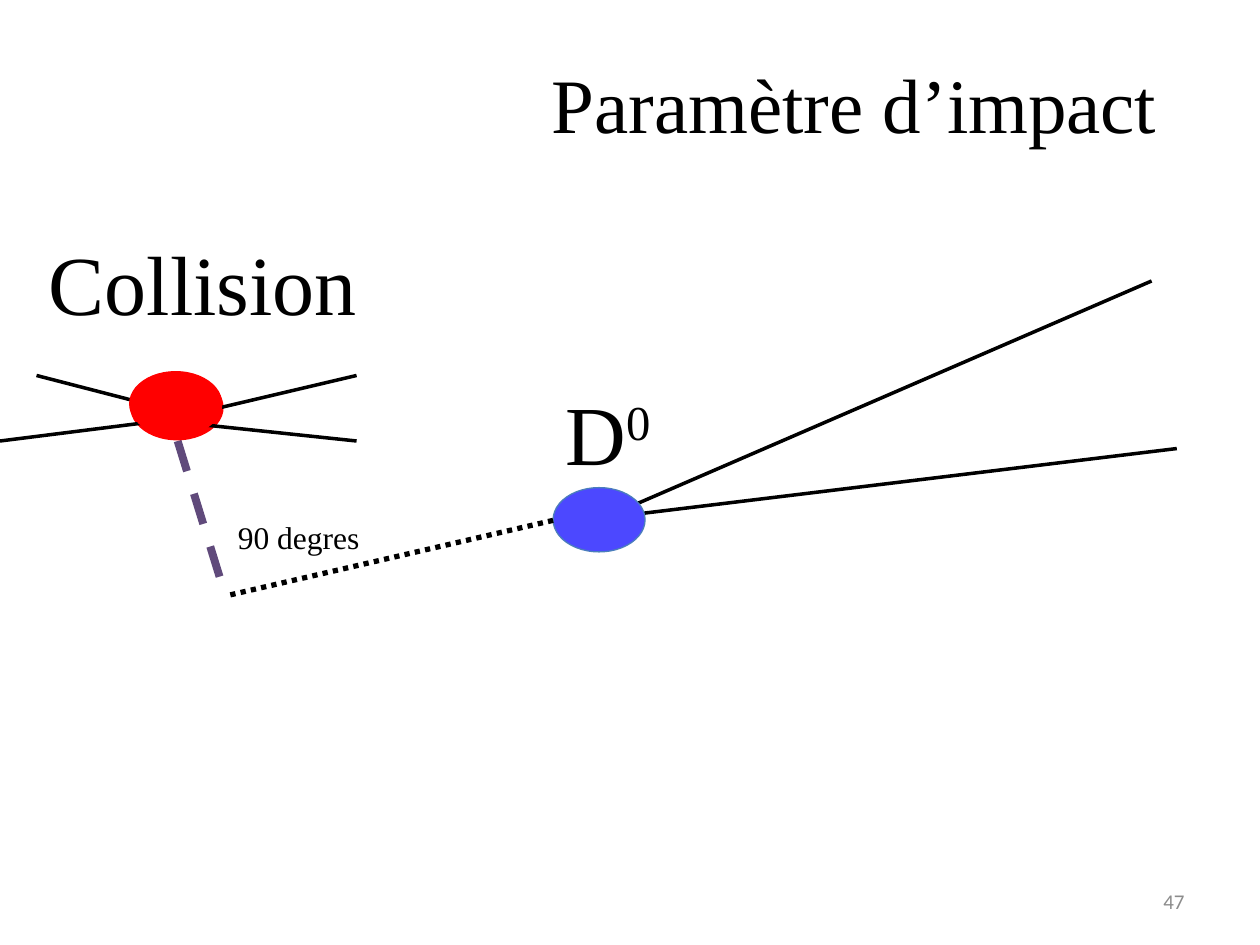
from typing import NamedTuple, Optional

from lxml.etree import SubElement
from pptx import Presentation
from pptx.dml.color import RGBColor
from pptx.enum.dml import MSO_LINE_DASH_STYLE as DASH
from pptx.enum.shapes import MSO_CONNECTOR, MSO_SHAPE
from pptx.enum.text import MSO_ANCHOR, MSO_AUTO_SIZE, PP_ALIGN
from pptx.oxml.ns import qn
from pptx.util import Inches, Pt

BLACK = RGBColor(0x00, 0x00, 0x00)
GREY = RGBColor(0x8C, 0x8C, 0x8C)
RED = RGBColor(0xFF, 0x00, 0x00)
BLUE = RGBColor(0x4C, 0x48, 0xFF)
BLUE_EDGE = RGBColor(0x4B, 0x7E, 0xBC)
PURPLE = RGBColor(0x60, 0x4A, 0x7B)
SERIF = "Times New Roman"


class Track(NamedTuple):
    x1: float
    y1: float
    x2: float
    y2: float
    color: RGBColor = BLACK
    width: float = 2
    dash: Optional[DASH] = None


class Vertex(NamedTuple):
    x: float
    y: float
    fill: RGBColor
    edge: RGBColor


class Label(NamedTuple):
    text: str
    x: float
    y: float
    w: float
    h: float
    size: float
    superscript: str = ""


DECAY_TRACKS = [
    Track(4.75, 4.13, 9.14, 2.23),
    Track(4.64, 4.13, 9.34, 3.56),
]
D0_VERTEX = Vertex(4.39, 3.87, BLUE, BLUE_EDGE)
IMPACT_LINES = [
    Track(4.39, 4.13, 1.79, 4.73, width=3, dash=DASH.ROUND_DOT),
    Track(1.41, 3.5, 1.79, 4.73, PURPLE, 4.5, DASH.DASH),
]
COLLISION_TRACKS = [
    Track(1.26, 3.35, 2.83, 2.98),
    Track(1.41, 3.35, 2.83, 3.5),
    Track(0, 3.5, 1.59, 3.3),
    Track(0.29, 2.98, 1.41, 3.27),
]
COLLISION_BACK = Vertex(1.04, 2.98, RED, RED)
COLLISION_FRONT = Vertex(1.03, 2.95, RED, RED)
LABELS = [
    Label("D", 4.39, 2.98, 0.91, 0.91, 48, superscript="0"),
    Label("90 degres", 1.79, 4.06, 1.2, 0.4, 18),
    Label("Collision", 0.29, 1.79, 2.67, 0.91, 48),
]
TITLE = Label("Paramètre d’impact", 4.28, 0.4, 5.05, 0.84, 44)


def add_tracks(slide, tracks: list[Track]) -> None:
    for t in tracks:
        line = slide.shapes.add_connector(
            MSO_CONNECTOR.STRAIGHT,
            Inches(t.x1), Inches(t.y1), Inches(t.x2), Inches(t.y2))
        line.line.color.rgb = t.color
        line.line.width = Pt(t.width)
        if t.dash is not None:
            line.line.dash_style = t.dash
        SubElement(line._element.spPr, qn("a:effectLst"))


def add_vertex(slide, v: Vertex) -> None:
    sp = slide.shapes.add_shape(
        MSO_SHAPE.OVAL, Inches(v.x), Inches(v.y), Inches(0.73), Inches(0.51))
    sp.shadow.inherit = False
    sp.fill.solid()
    sp.fill.fore_color.rgb = v.fill
    sp.line.color.rgb = v.edge
    sp.line.width = Pt(0.75)


def fill_label(sp, label: Label) -> None:
    """Write unwrapped serif text into a text box or placeholder."""
    tf = sp.text_frame
    tf.word_wrap = False
    tf.auto_size = MSO_AUTO_SIZE.SHAPE_TO_FIT_TEXT
    tf.vertical_anchor = MSO_ANCHOR.TOP
    p = tf.paragraphs[0]
    p.alignment = PP_ALIGN.LEFT
    p.font.name = SERIF
    p.font.size = Pt(label.size)
    p.font.color.rgb = BLACK
    p.add_run().text = label.text
    if label.superscript:
        r = p.add_run()
        r.text = label.superscript
        r.font._element.set("baseline", "30000")


def add_label(slide, label: Label) -> None:
    sp = slide.shapes.add_textbox(
        Inches(label.x), Inches(label.y), Inches(label.w), Inches(label.h))
    fill_label(sp, label)


def set_title(slide, label: Label) -> None:
    sp = slide.shapes.title
    sp.left, sp.top = Inches(label.x), Inches(label.y)
    sp.width, sp.height = Inches(label.w), Inches(label.h)
    fill_label(sp, label)


def add_page_number(slide, number: int) -> None:
    sp = slide.shapes.add_textbox(
        Inches(7.17), Inches(6.95), Inches(2.33), Inches(0.4))
    tf = sp.text_frame
    tf.word_wrap = True
    tf.vertical_anchor = MSO_ANCHOR.MIDDLE
    p = tf.paragraphs[0]
    p.text = str(number)
    p.alignment = PP_ALIGN.RIGHT
    p.font.name = "Calibri"
    p.font.size = Pt(12)
    p.font.color.rgb = GREY


def main() -> None:
    prs = Presentation()
    prs.slide_width, prs.slide_height = Inches(10), Inches(7.5)
    slide = prs.slides.add_slide(prs.slide_layouts[5])
    set_title(slide, TITLE)
    add_page_number(slide, 47)
    add_tracks(slide, DECAY_TRACKS)
    add_vertex(slide, D0_VERTEX)
    add_tracks(slide, IMPACT_LINES)
    add_vertex(slide, COLLISION_BACK)
    for label in LABELS:
        add_label(slide, label)
    add_tracks(slide, COLLISION_TRACKS)
    add_vertex(slide, COLLISION_FRONT)
    prs.save("out.pptx")


if __name__ == "__main__":
    main()
